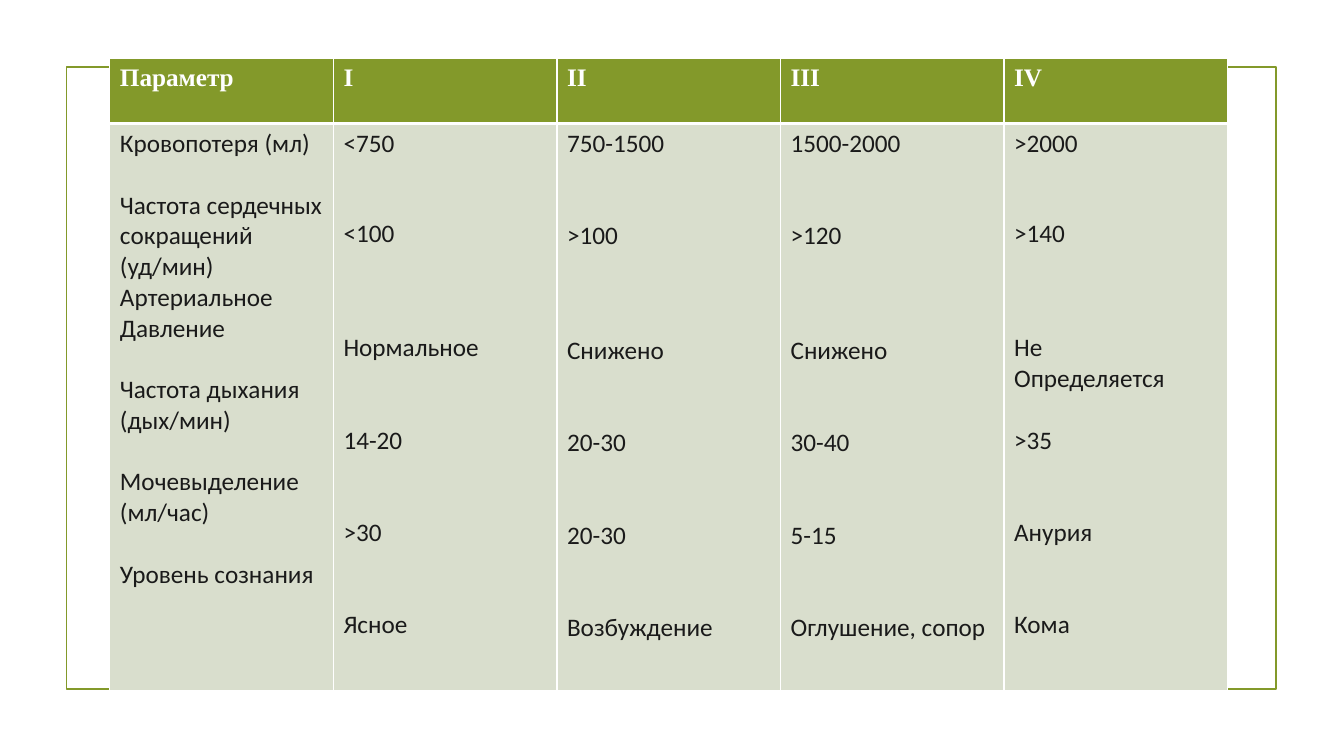
from dataclasses import dataclass

from lxml.etree import SubElement
from pptx import Presentation
from pptx.dml.color import RGBColor
from pptx.enum.shapes import MSO_SHAPE
from pptx.oxml.ns import qn
from pptx.util import Pt


@dataclass(frozen=True)
class Theme:
    green: str = "83992A"
    pale: str = "D9DECD"
    dark: str = "1A1A1A"
    white: str = "FFFFFF"
    size: float = 18
    head: str = "Times New Roman"
    body: str = "Calibri"


LINE = 22
LOW, DUO, TRI = 42, 44, 60

HEADS = ["Параметр", "I", "II", "III", "IV"]
CELLS = [
    [("Кровопотеря (мл)", 0), ("Частота сердечных", LINE),
     ("сокращений (уд/мин)", 0), ("Артериальное", 0), ("Давление", 0),
     ("Частота дыхания", LINE), ("(дых/мин)", 0),
     ("Мочевыделение", LINE), ("(мл/час)", 0), ("Уровень сознания", LINE)],
    [("<750", 0), ("<100", LOW), ("Нормальное", TRI),
     ("14-20", DUO), (">30", DUO), ("Ясное", DUO)],
    [("750-1500", 0), (">100", DUO), ("Снижено", TRI),
     ("20-30", DUO), ("20-30", DUO), ("Возбуждение", DUO)],
    [("1500-2000", 0), (">120", DUO), ("Снижено", TRI),
     ("30-40", DUO), ("5-15", DUO), ("Оглушение, сопор", DUO)],
    [(">2000", 0), (">140", LOW), ("Не", TRI), ("Определяется", 0),
     (">35", LINE), ("Анурия", DUO), ("Кома", DUO)],
]


class Deck:
    """Draws styled elements on the current slide."""

    def __init__(self, theme):
        self.theme = theme
        self.show = Presentation()
        self.show.slide_width = Pt(960)
        self.show.slide_height = Pt(540)
        self.slide = self.show.slides.add_slide(self.show.slide_layouts[6])

    def frame(self, left, top, width, height):
        box = self.slide.shapes.add_shape(
            MSO_SHAPE.RECTANGLE, Pt(left), Pt(top), Pt(width), Pt(height))
        box.shadow.inherit = False
        box.fill.background()
        box.line.color.rgb = RGBColor.from_string(self.theme.green)
        box.line.width = Pt(1.25)

    def edges(self, cell, widths):
        props = cell._tc.get_or_add_tcPr()
        for side, width in zip("LRTB", widths):
            line = SubElement(props, qn(f"a:ln{side}"), w=str(Pt(width)))
            fill = SubElement(line, qn("a:solidFill"))
            SubElement(fill, qn("a:srgbClr"), val=self.theme.white)

    def label(self, cell, lines, font, color, bold):
        text = cell.text_frame
        for i, (words, gap) in enumerate(lines):
            para = text.add_paragraph() if i else text.paragraphs[0]
            if gap:
                para.space_before = Pt(gap)
            run = para.add_run()
            run.text = words
            run.font.name = font
            run.font.size = Pt(self.theme.size)
            run.font.bold = bold
            run.font.color.rgb = RGBColor.from_string(color)

    def table(self, left, top, width, heights, heads, cells):
        look = self.theme
        grid = self.slide.shapes.add_table(
            2, len(heads), Pt(left), Pt(top), Pt(width), Pt(sum(heights))).table
        grid.horz_banding = False
        for col in grid.columns:
            col.width = Pt(width / len(heads))
        rows = [
            ([[(head, 0)] for head in heads], look.green, look.head,
             look.white, True, (1, 1, 1, 3)),
            (cells, look.pale, look.body, look.dark, False, (1, 1, 3, 1)),
        ]
        for r, (items, fill, font, color, bold, widths) in enumerate(rows):
            grid.rows[r].height = Pt(heights[r])
            for c, lines in enumerate(items):
                cell = grid.cell(r, c)
                self.edges(cell, widths)
                cell.fill.solid()
                cell.fill.fore_color.rgb = RGBColor.from_string(fill)
                self.label(cell, lines, font, color, bold)


def main():
    deck = Deck(Theme())
    deck.frame(47.5, 48, 864, 444)
    deck.table(78.5, 41.8, 798.5, (46.4, 405.4), HEADS, CELLS)
    deck.show.save("out.pptx")


if __name__ == "__main__":
    main()
